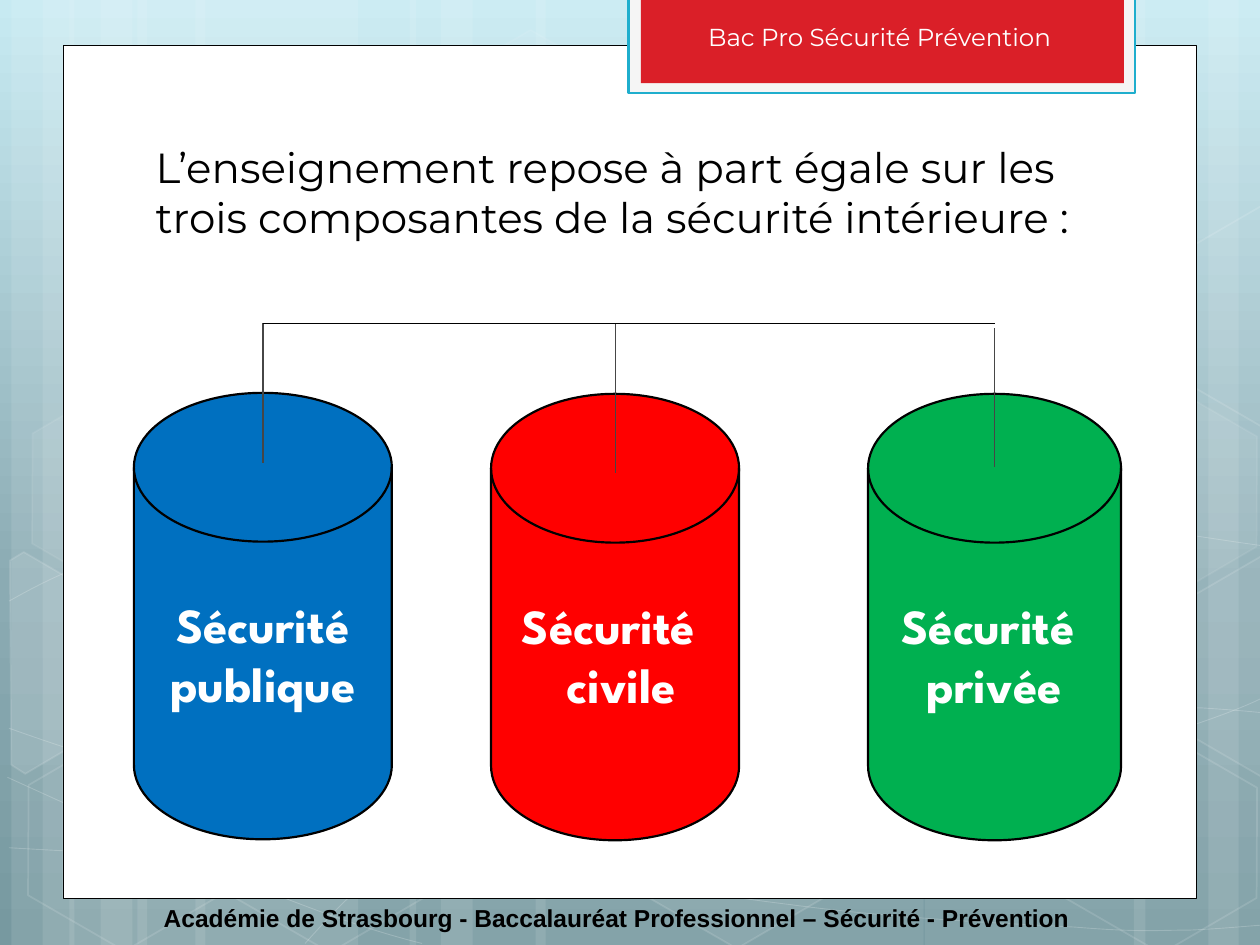
from copy import deepcopy
from pptx import Presentation
from pptx.dml.color import RGBColor
from pptx.enum.shapes import MSO_CONNECTOR, MSO_SHAPE
from pptx.enum.text import MSO_ANCHOR, MSO_AUTO_SIZE, PP_ALIGN
from pptx.oxml.ns import qn
from pptx.util import Cm, Pt
from lxml.etree import SubElement


def paint(shape, fill=None, fill_alpha=100, line=None, width=1, line_alpha=100):
    shape.shadow.inherit = False
    for form, color, alpha in ((shape.fill, fill, fill_alpha), (shape.line.fill, line, line_alpha)):
        if color is None:
            form.background()
            continue
        form.solid()
        form.fore_color.rgb = RGBColor.from_string(color)
        if alpha < 100:
            properties = shape._element.spPr
            parent = properties if form is shape.fill else properties.find(qn("a:ln"))
            tint = parent.find(qn("a:solidFill")).find(qn("a:srgbClr"))
            SubElement(tint, qn("a:alpha")).set("val", str(alpha * 1000))
    if line:
        shape.line.width = Pt(width)


def write(shape, lines, size, font_name, color, bold, align):
    frame = shape.text_frame
    for number, line in enumerate(lines):
        paragraph = frame.paragraphs[0] if number == 0 else frame.add_paragraph()
        paragraph.alignment = align
        run = paragraph.add_run()
        run.text = line
        run.font.size = Pt(size)
        run.font.name = font_name
        run.font.bold = bold
        run.font.color.rgb = RGBColor.from_string(color)


presentation = Presentation()
presentation.slide_width = Cm(25.4)
presentation.slide_height = Cm(19.05)
slide = presentation.slides.add_slide(presentation.slide_layouts[6])
shapes = slide.shapes

background = slide.background.fill
background.gradient()
background.gradient_angle = 270
stop_list = next(slide._element.iter(qn("a:gsLst")))
stop_list.append(deepcopy(stop_list[-1]))
sky = ((0, "C7EAF2"), (0.62, "8BABB3"), (1, "7799A0"))
for stop, (position, color) in zip(background.gradient_stops, sky):
    stop.position = position
    stop.color.rgb = RGBColor.from_string(color)

strips = (
    (2.77, 4.45), (0.23, 1.27), (0.86, 2.11), (3.94, 4.45), (1.4, 1.27), (2.03, 2.11),
    (18.64, 4.45), (24.36, 1.27), (22.86, 2.11), (10.8, 7.82), (8.26, 1.27), (8.89, 2.11),
)
for left, width in strips:
    strip = shapes.add_shape(MSO_SHAPE.RECTANGLE, Cm(left), 0, Cm(width), Cm(19.05))
    paint(strip, "FFFFFF", 10)

curves = (
    ((0.18, 17.09), (1.55, 17.17), (2.92, 17.25), (4.83, 17.22), (6.73, 17.2), (9.09, 17.15),
     (11.63, 16.89), (14.17, 16.64), (17.78, 16.15), (20.12, 15.67), (22.43, 15.19),
     (24.82, 14.43), (25.58, 14)),
    ((0.18, 12.12), (0.91, 11.71), (1.65, 11.33), (3.07, 10.95), (4.52, 10.57), (6.58, 10.01),
     (8.81, 9.83), (11.07, 9.65), (13.82, 9.63), (16.61, 9.83), (19.41, 10.03),
     (24.05, 10.82), (25.58, 11.02)),
    ((0.15, 15.67), (3.23, 17.07), (6.27, 18.47), (8.51, 19.02)),
    ((0.18, 14.68), (0.97, 14.96), (1.78, 15.24), (3.25, 15.65), (4.72, 16.03), (6.93, 16.66),
     (9.07, 17.09), (11.18, 17.53), (13.84, 17.98), (15.95, 18.24), (18.06, 18.52),
     (20.32, 18.62), (21.67, 18.69), (23.01, 18.8), (23.34, 18.75), (24, 18.75),
     (24.66, 18.72), (25.12, 18.67), (25.58, 18.64)),
    ((6.15, 19.02), (6.6, 18.52), (7.06, 18.01), (7.67, 17.55), (8.28, 17.07), (9.14, 16.59),
     (9.86, 16.23), (10.57, 15.88), (11, 15.72), (11.91, 15.47), (12.85, 15.21), (14.55, 14.86),
     (15.44, 14.68), (16.36, 14.5), (16.48, 14.5), (17.27, 14.45), (18.06, 14.38), (19.3, 14.3),
     (20.17, 14.27), (21.06, 14.25), (22.5, 14.27), (22.5, 14.27), (23.07, 14.27),
     (23.64, 14.27), (24.21, 14.27), (24.66, 14.3), (25.1, 14.33), (25.55, 14.38)),
)
for controls in curves:
    points = [(Cm(x), Cm(y)) for x, y in controls]
    builder = shapes.build_freeform(*points[0])
    builder.add_line_segments(points[1:], close=False)
    curve = builder.convert_to_shape()
    segments = list(curve._element.iter(qn("a:lnTo")))
    outline = segments[0].getparent()
    for first in range(0, len(segments), 3):
        bezier = SubElement(outline, qn("a:cubicBezTo"))
        for segment in segments[first:first + 3]:
            bezier.append(segment[0])
            outline.remove(segment)
    paint(curve, line="FFFFFF", width=0.5, line_alpha=20)

hexagons = (
    (8.48, 0.91, 4, 8), (12.62, 14.96, 6, 12), (0.28, 15.01, 0, 12), (0.36, 7.92, 7, 8),
    (4.42, 15.04, 0, 12), (21.18, 15.06, 0, 12), (21.18, 7.98, 7, 8),
)
for left, top, fill_alpha, line_alpha in hexagons:
    hexagon = shapes.add_shape(MSO_SHAPE.HEXAGON, Cm(left), Cm(top), Cm(4.45), Cm(3.86))
    hexagon.adjustments[0] = 0.285
    hexagon.rotation = 30
    paint(hexagon, "FFFFFF" if fill_alpha else None, fill_alpha, "FFFFFF", 1, line_alpha)

cut_hexagons = (
    (10, ((0.2, 11.3), (0.48, 11.13), (2.44, 12.27), (2.41, 14.48), (0.51, 15.6), (0.23, 15.42))),
    (4, ((23.52, 12.32), (25.45, 11.2), (25.63, 11.33), (25.63, 15.57), (25.45, 15.67), (23.52, 14.55))),
    (0, ((23.52, 5.26), (25.45, 4.14), (25.65, 4.27), (25.63, 8.51), (25.45, 8.61), (23.52, 7.49))),
)
for fill_alpha, corners in cut_hexagons:
    points = [(Cm(x), Cm(y)) for x, y in corners]
    builder = shapes.build_freeform(*points[0])
    builder.add_line_segments(points[1:])
    paint(builder.convert_to_shape(), "FFFFFF" if fill_alpha else None, fill_alpha, "FFFFFF", 1, 12)

panels = (
    (1.27, 0.91, 22.86, 17.2, "FFFFFF", "000000", 0.5),
    (12.67, -0.05, 10.22, 1.93, "F5F5F5", "1FAECD", 1.25),
    (12.92, -0.05, 9.74, 1.73, "DA1F28", None, 0),
)
for left, top, width, height, fill, line, line_width in panels:
    panel = shapes.add_shape(MSO_SHAPE.RECTANGLE, Cm(left), Cm(top), Cm(width), Cm(height))
    paint(panel, fill, line=line, width=line_width)

cylinders = (
    (2.7, 7.92, 5.2, "0070C0", ("Sécurité publique",)),
    (9.9, 7.94, 5, "FF0000", ("Sécurité ", " civile")),
    (17.5, 7.94, 5.1, "00B050", ("Sécurité ", "privée")),
)
for left, top, width, color, lines in cylinders:
    cylinder = shapes.add_shape(MSO_SHAPE.FLOWCHART_MAGNETIC_DISK, Cm(left), Cm(top), Cm(width), Cm(9))
    paint(cylinder, color, line="000000", width=1.25)
    cylinder.text_frame.word_wrap = True
    cylinder.text_frame.vertical_anchor = MSO_ANCHOR.MIDDLE
    write(cylinder, lines, 28, "League Spartan", "FFFFFF", True, PP_ALIGN.CENTER)

branches = (
    (5.3, 9.33, 5.3, 6.52, "464646"),
    (12.41, 9.53, 12.41, 6.52, "464646"),
    (20.05, 9.41, 20.05, 6.61, "464646"),
    (5.3, 6.52, 20.05, 6.52, "000000"),
)
for start_x, start_y, end_x, end_y, color in branches:
    branch = shapes.add_connector(MSO_CONNECTOR.STRAIGHT, Cm(start_x), Cm(start_y), Cm(end_x), Cm(end_y))
    branch.line.color.rgb = RGBColor.from_string(color)
    branch.line.width = Pt(0.75)
    SubElement(branch._element.spPr, qn("a:effectLst"))

title = "L’enseignement repose à part égale sur les trois composantes de la sécurité intérieure :"
footer = "Académie de Strasbourg - Baccalauréat Professionnel – Sécurité - Prévention"
texts = (
    (3.05, 18.07, 18.85, 0.86, footer, 14, "Arial", "000000", True, PP_ALIGN.LEFT, False, 0),
    (13.1, 0.32, 9.4, 0.86, "Bac Pro Sécurité Prévention ", 14, "Montserrat", "FFFFFF", False,
     PP_ALIGN.CENTER, True, 0),
    (2.7, 2.72, 20.4, 3.33, title, 24, "Montserrat", "000000", False, PP_ALIGN.LEFT, True, 0.19),
)
for left, top, width, height, text, size, font_name, color, bold, align, wrap, indent in texts:
    box = shapes.add_textbox(Cm(left), Cm(top), Cm(width), Cm(height))
    box.text_frame.word_wrap = wrap
    box.text_frame.auto_size = MSO_AUTO_SIZE.SHAPE_TO_FIT_TEXT
    write(box, (text,), size, font_name, color, bold, align)
    if indent:
        box.text_frame.paragraphs[0]._p.get_or_add_pPr().set("marL", str(Cm(indent)))

presentation.save("out.pptx")
